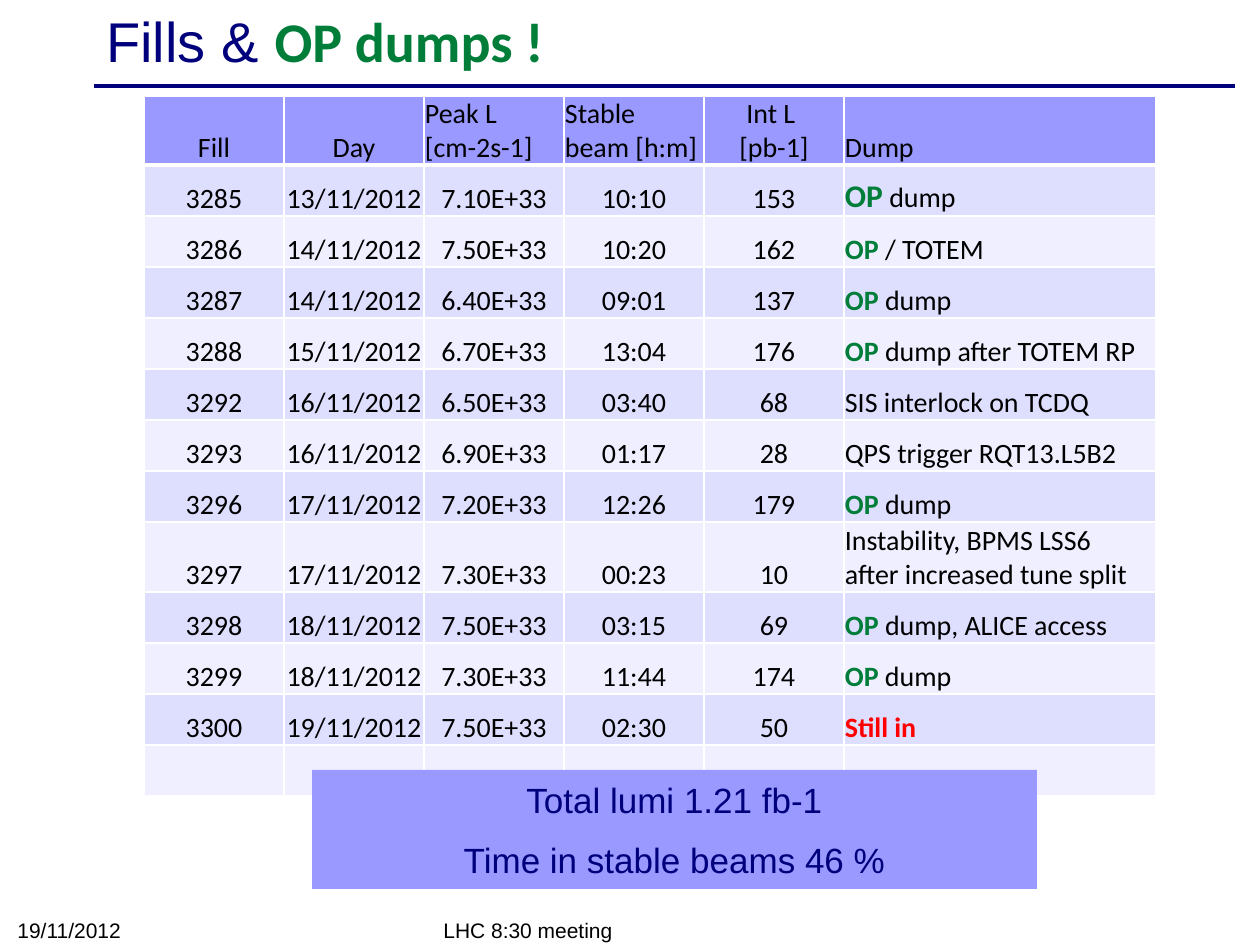
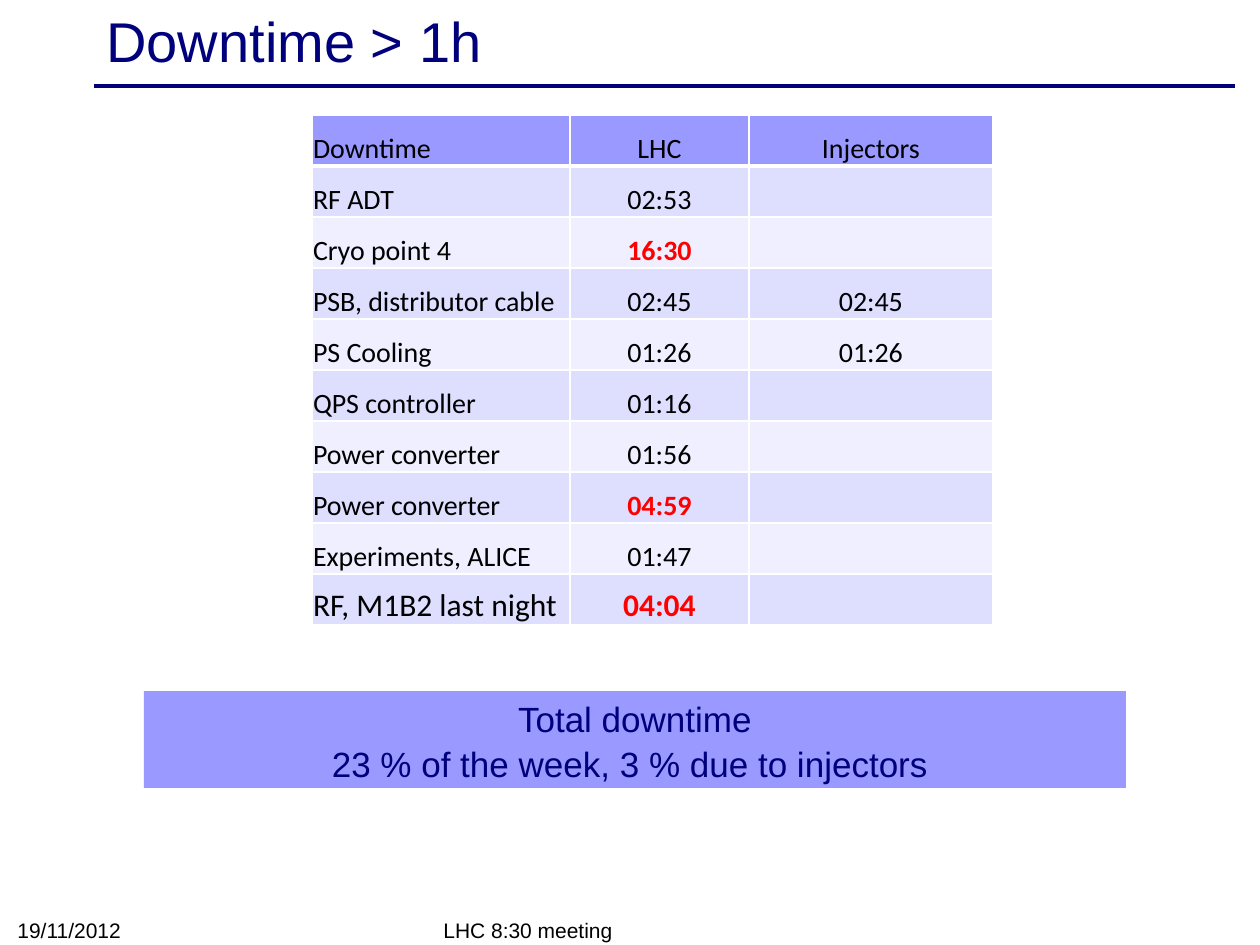
import lxml.etree
import pptx
import pptx.dml.color
import pptx.enum.shapes
import pptx.enum.text
import pptx.oxml.ns
import pptx.util

RGB = pptx.dml.color.RGBColor
ALIGN = pptx.enum.text.PP_ALIGN
ANCHOR = pptx.enum.text.MSO_ANCHOR

# Colours and fonts
NAVY = RGB(0x00, 0x00, 0x7D)
GREEN = RGB(0x00, 0x7E, 0x39)
RED = RGB(0xFF, 0x00, 0x00)
BLACK = RGB(0x00, 0x00, 0x00)
LILAC = RGB(0x99, 0x99, 0xFF)
BANDS = (RGB(0xDE, 0xDE, 0xFF), RGB(0xEF, 0xEF, 0xFF))
BORDER = "FFFFFF"
HEADING_FONT, TABLE_FONT = "Arial", "Calibri"

# Lengths in px, 126 to the inch
SCALE = 914400 / 126
PAGE_SIZE = (1260, 945)
TITLE_AREA = (94, 4, 1134, 72)
RULE = (94, 86, 1235, 86)
ROW_HEIGHT = 51

# Content: a span is a plain string or (string, format)
OP = dict(color=GREEN, bold=True)
ALERT = dict(color=RED, bold=True)

FOOTERS = [
    ("LHC 8:30 meeting", (431, 914, 399, 35)),
    ("19/11/2012", (5, 912, 294, 37)),
]

FILLS = {
    "title": ["Fills & ", ("OP dumps !", dict(OP, font=TABLE_FONT))],
    "table": {
        "corner": (144, 96),
        "columns": [140] * 5 + [312],
        "tall_rows": {0: 69, 8: 70},
        "left_columns": {5},
        "left_headers": {2, 3, 5},
        "rows": [
            ["Fill", "Day", "Peak L\n[cm-2s-1]", "Stable beam [h:m]", "Int L \n[pb-1]", "Dump"],
            ["3285", "13/11/2012", "7.10E+33", "10:10", "153",
             [("OP", dict(OP, size=18)), " dump"]],
            ["3286", "14/11/2012", "7.50E+33", "10:20", "162", [("OP ", OP), "/ TOTEM"]],
            ["3287", "14/11/2012", "6.40E+33", "09:01", "137", [("OP ", OP), "dump"]],
            ["3288", "15/11/2012", "6.70E+33", "13:04", "176",
             [("OP ", OP), "dump after TOTEM RP"]],
            ["3292", "16/11/2012", "6.50E+33", "03:40", "68", "SIS interlock on TCDQ"],
            ["3293", "16/11/2012", "6.90E+33", "01:17", "28", "QPS trigger RQT13.L5B2"],
            ["3296", "17/11/2012", "7.20E+33", "12:26", "179", [("OP ", OP), "dump"]],
            ["3297", "17/11/2012", "7.30E+33", "00:23", "10",
             "Instability, BPMS LSS6\nafter increased tune split"],
            ["3298", "18/11/2012", "7.50E+33", "03:15", "69",
             [("OP ", OP), "dump, ALICE access"]],
            ["3299", "18/11/2012", "7.30E+33", "11:44", "174", [("OP", OP), " dump"]],
            ["3300", "19/11/2012", "7.50E+33", "02:30", "50", [("Still in", ALERT)]],
            [""] * 6,
        ],
    },
    "summary": ["Total lumi 1.21 fb-1", "Time in stable beams 46 %"],
    "summary_area": (312, 770, 725, 119),
    "summary_spacing": None,
}

DOWNTIME = {
    "title": "Downtime > 1h",
    "table": {
        "corner": (312, 115),
        "columns": [258, 179, 244],
        "tall_rows": {},
        "left_columns": {0},
        "left_headers": {0},
        "rows": [
            ["Downtime", "LHC", "Injectors"],
            ["RF ADT", "02:53", ""],
            ["Cryo point 4", [("16:30", ALERT)], ""],
            ["PSB, distributor cable", "02:45", "02:45"],
            ["PS Cooling", "01:26", "01:26"],
            ["QPS controller", "01:16", ""],
            ["Power converter", "01:56", ""],
            ["Power converter", [("04:59", ALERT)], ""],
            ["Experiments, ALICE", "01:47", ""],
            [[("RF, M1B2 last night", dict(size=18))], [("04:04", dict(ALERT, size=18))], ""],
        ],
    },
    "summary": ["Total downtime\n23 % of the week, 3 % due to injectors "],
    "summary_area": (144, 691, 982, 97),
    "summary_spacing": 1.07,
}


def px(length):
    return pptx.util.Emu(round(length * SCALE))


def write(frame, paragraphs, size, font=HEADING_FONT, color=BLACK, align=ALIGN.LEFT,
          gap=0, spacing=None):
    """Fill a text frame; each paragraph is a string or a list of spans."""
    frame.word_wrap = True
    for index, spans in enumerate(paragraphs):
        para = frame.add_paragraph() if index else frame.paragraphs[0]
        para.alignment = align
        if index:
            para.space_before = pptx.util.Pt(gap)
        if spacing:
            para.line_spacing = spacing
        for item in [spans] if isinstance(spans, str) else spans:
            text, style = (item, {}) if isinstance(item, str) else item
            for number, line in enumerate(text.split("\n")):
                if number:
                    para.add_line_break()
                if not line:
                    continue
                span = para.add_run()
                span.text = line
                span.font.name = style.get("font", font)
                span.font.size = pptx.util.Pt(style.get("size", size))
                span.font.bold = style.get("bold", False)
                span.font.color.rgb = style.get("color", color)


def add_text(page, area, paragraphs, anchor, **style):
    box = page.shapes.add_textbox(*map(px, area))
    box.text_frame.vertical_anchor = anchor
    write(box.text_frame, paragraphs, **style)


def add_frame(page, title):
    """Title, rule and footers shared by every page."""
    rule = page.shapes.add_connector(pptx.enum.shapes.MSO_CONNECTOR.STRAIGHT, *map(px, RULE))
    rule.line.color.rgb = NAVY
    rule.line.width = pptx.util.Pt(2)
    properties = rule.element.find(pptx.oxml.ns.qn("p:spPr"))
    lxml.etree.SubElement(properties, pptx.oxml.ns.qn("a:effectLst"))
    add_text(page, TITLE_AREA, [title], ANCHOR.MIDDLE, size=32, color=NAVY)
    for text, area in FOOTERS:
        add_text(page, area, [text], ANCHOR.BOTTOM, size=12)


def set_borders(cell, **widths):
    properties = cell._tc.get_or_add_tcPr()
    for index, side in enumerate("LRTB"):
        line = lxml.etree.Element(pptx.oxml.ns.qn("a:ln" + side))
        line.set("w", str(pptx.util.Pt(widths.get(side, 1))))
        fill = lxml.etree.SubElement(line, pptx.oxml.ns.qn("a:solidFill"))
        lxml.etree.SubElement(fill, pptx.oxml.ns.qn("a:srgbClr")).set("val", BORDER)
        properties.insert(index, line)


def add_grid(page, corner, columns, tall_rows, left_columns, left_headers, rows):
    heights = [tall_rows.get(index, ROW_HEIGHT) for index in range(len(rows))]
    size = (sum(columns), sum(heights))
    table = page.shapes.add_table(len(rows), len(columns), *map(px, corner + size)).table
    for column, width in zip(table.columns, columns):
        column.width = px(width)
    for row_index, values in enumerate(rows):
        table.rows[row_index].height = px(heights[row_index])
        left = left_columns if row_index else left_headers
        for column_index, value in enumerate(values):
            cell = table.cell(row_index, column_index)
            cell.fill.solid()
            cell.fill.fore_color.rgb = BANDS[(row_index - 1) % 2] if row_index else LILAC
            # A thick line parts the header from the body
            set_borders(cell, **{0: dict(B=3), 1: dict(T=3)}.get(row_index, {}))
            cell.margin_left = cell.margin_right = cell.margin_top = px(1)
            cell.margin_bottom = 0
            cell.vertical_anchor = ANCHOR.BOTTOM
            write(cell.text_frame, [value], size=16, font=TABLE_FONT,
                  align=ALIGN.LEFT if column_index in left else ALIGN.CENTER)


def add_summary(page, area, paragraphs, spacing):
    box = page.shapes.add_shape(pptx.enum.shapes.MSO_SHAPE.RECTANGLE, *map(px, area))
    box.shadow.inherit = False
    box.fill.solid()
    box.fill.fore_color.rgb = LILAC
    box.line.fill.background()
    box.text_frame.vertical_anchor = ANCHOR.MIDDLE
    write(box.text_frame, paragraphs, size=20, color=NAVY, align=ALIGN.CENTER,
          gap=10, spacing=spacing)


def main():
    deck = pptx.Presentation()
    deck.slide_width, deck.slide_height = map(px, PAGE_SIZE)
    for content in (FILLS, DOWNTIME):
        page = deck.slides.add_slide(deck.slide_layouts[6])
        add_frame(page, content["title"])
        add_grid(page, **content["table"])
        add_summary(page, content["summary_area"], content["summary"],
                    content["summary_spacing"])
    deck.save("out.pptx")


if __name__ == "__main__":
    main()
